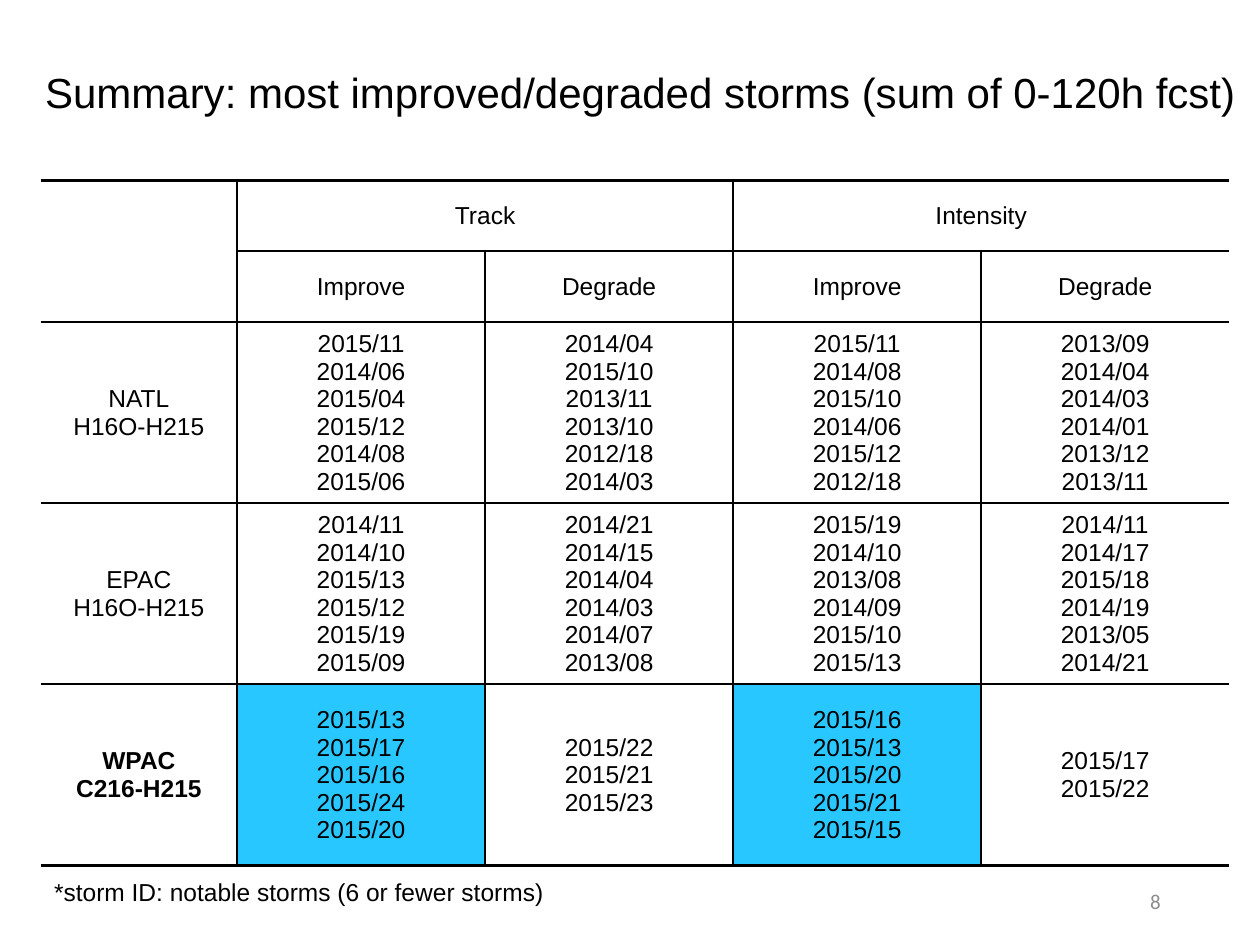
from lxml import etree
from pptx import Presentation
from pptx import util as u
from pptx.dml.color import RGBColor
from pptx.enum import text
from pptx.oxml import ns

COLORS = {"ink": "000000", "paper": "FFFFFF", "highlight": "29C7FF", "number": "8C8C8C"}
PLAIN_TABLE_STYLE = "{2D5ABB26-0587-4C30-8999-92F81FD0307C}"
COLUMN_WIDTHS = [3.96, 5, 5, 5, 5]
ROW_HEIGHTS = [1.43, 1.43, 3.65, 3.65, 3.65]
MERGES = [((0, 0), (1, 0)), ((0, 1), (0, 2)), ((0, 3), (0, 4))]
HIGHLIGHTED = {(4, 1), (4, 3)}
BOLD = {(4, 0)}
STORMS = [
    ["", "Track", "", "Intensity", ""],
    ["", "Improve", "Degrade", "Improve", "Degrade"],
    ["NATL H16O-H215",
     "2015/11 2014/06 2015/04 2015/12 2014/08 2015/06",
     "2014/04 2015/10 2013/11 2013/10 2012/18 2014/03",
     "2015/11 2014/08 2015/10 2014/06 2015/12 2012/18",
     "2013/09 2014/04 2014/03 2014/01 2013/12 2013/11"],
    ["EPAC H16O-H215",
     "2014/11 2014/10 2015/13 2015/12 2015/19 2015/09",
     "2014/21 2014/15 2014/04 2014/03 2014/07 2013/08",
     "2015/19 2014/10 2013/08 2014/09 2015/10 2015/13",
     "2014/11 2014/17 2015/18 2014/19 2013/05 2014/21"],
    ["WPAC C216-H215",
     "2015/13 2015/17 2015/16 2015/24 2015/20",
     "2015/22 2015/21 2015/23",
     "2015/16 2015/13 2015/20 2015/21 2015/15",
     "2015/17 2015/22"],
]


def color(name):
    return RGBColor.from_string(COLORS[name])


def set_values(target, values):
    for name, value in values.items():
        setattr(target, name, value)


def write_lines(frame, lines, size, align, font="Arial", ink="ink", bold=False, spacing=1.0):
    for index, line in enumerate(lines):
        paragraph = frame.paragraphs[0] if index == 0 else frame.add_paragraph()
        set_values(paragraph, {"alignment": align, "line_spacing": spacing})
        run = paragraph.add_run()
        run.text = line
        set_values(run.font, {"name": font, "size": u.Pt(size), "bold": bold})
        run.font.color.rgb = color(ink)


def add_label(slide, box, label, size, align=text.PP_ALIGN.LEFT,
              anchor=text.MSO_ANCHOR.MIDDLE, wrap=True, **style):
    shape = slide.shapes.add_textbox(*map(u.Cm, box))
    set_values(shape.text_frame, {"word_wrap": wrap, "vertical_anchor": anchor})
    write_lines(shape.text_frame, [label], size, align, **style)


def add_border(cell, side, width):
    properties = cell._tc.get_or_add_tcPr()
    line = etree.SubElement(properties, ns.qn(f"a:ln{side}"), w=str(u.Pt(width)))
    if width:
        fill = etree.SubElement(line, ns.qn("a:solidFill"))
        etree.SubElement(fill, ns.qn("a:srgbClr"), val=COLORS["ink"])
    else:
        etree.SubElement(line, ns.qn("a:noFill"))


def format_cell(cell, row, column):
    last_row = row + cell.span_height == len(ROW_HEIGHTS)
    last_column = column + cell.span_width == len(COLUMN_WIDTHS)
    widths = {"L": 1 if column else 0, "R": 0 if last_column else 1,
              "T": 1 if row else 2, "B": 2 if last_row else 1}
    for side, width in widths.items():
        add_border(cell, side, width)
    cell.fill.solid()
    cell.fill.fore_color.rgb = color("highlight" if (row, column) in HIGHLIGHTED else "paper")
    set_values(cell, {"vertical_anchor": text.MSO_ANCHOR.MIDDLE,
                      "margin_left": u.Cm(0.2), "margin_right": u.Cm(0.2),
                      "margin_top": u.Cm(0.02), "margin_bottom": u.Cm(0)})
    write_lines(cell.text_frame, STORMS[row][column].split(), 14,
                text.PP_ALIGN.CENTER, bold=(row, column) in BOLD)


def add_storm_table(slide):
    box = (0.82, 3.63, sum(COLUMN_WIDTHS), sum(ROW_HEIGHTS))
    table = slide.shapes.add_table(len(ROW_HEIGHTS), len(COLUMN_WIDTHS), *map(u.Cm, box)).table
    set_values(table, {"first_row": False, "horz_banding": False})
    table._tbl.tblPr.find(ns.qn("a:tableStyleId")).text = PLAIN_TABLE_STYLE
    for column, width in zip(table.columns, COLUMN_WIDTHS):
        column.width = u.Cm(width)
    for row, height in zip(table.rows, ROW_HEIGHTS):
        row.height = u.Cm(height)
    for first, last in MERGES:
        table.cell(*first).merge(table.cell(*last))
    for row in range(len(ROW_HEIGHTS)):
        for column in range(len(COLUMN_WIDTHS)):
            cell = table.cell(row, column)
            if not cell.is_spanned:
                format_cell(cell, row, column)


def main():
    presentation = Presentation()
    set_values(presentation, {"slide_width": u.Cm(25.4), "slide_height": u.Cm(19.05)})
    slide = presentation.slides.add_slide(presentation.slide_layouts[6])
    add_label(slide, (0.66, 1.02, 24.74, 1.78),
              "Summary: most improved/degraded storms (sum of 0-120h fcst)", 24, spacing=0.9)
    add_label(slide, (17.93, 17.65, 5.72, 1.02), "8", 12, text.PP_ALIGN.RIGHT,
              font="Calibri", ink="number")
    add_label(slide, (0.84, 17.55, 10.44, 0.86),
              "*storm ID: notable storms (6 or fewer storms)", 14,
              anchor=text.MSO_ANCHOR.TOP, wrap=False)
    add_storm_table(slide)
    presentation.save("out.pptx")


if __name__ == "__main__":
    main()
